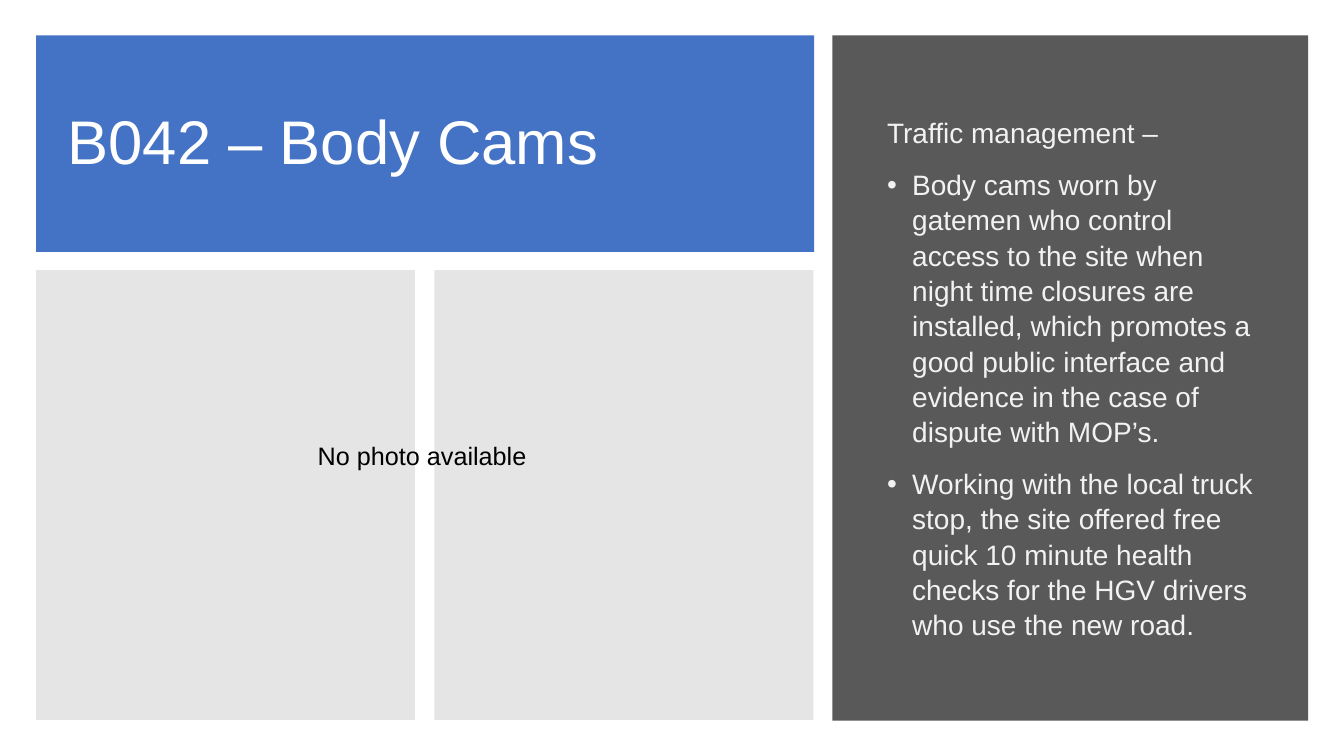
"""Build the body cams slide with a title, two photo areas and a text panel."""
from typing import NamedTuple, Optional

from lxml.etree import SubElement
from pptx import Presentation
from pptx.dml.color import RGBColor
from pptx.enum.shapes import MSO_SHAPE as Shape
from pptx.enum.text import MSO_ANCHOR as Anchor, MSO_AUTO_SIZE as AutoSize, PP_ALIGN as Align
from pptx.oxml.ns import qn
from pptx.util import Cm, Pt

BLUE = RGBColor(0x44, 0x72, 0xC4)
GREY = RGBColor(0x7F, 0x7F, 0x7F)
CHARCOAL = RGBColor(0x59, 0x59, 0x59)
OFF_WHITE = RGBColor(0xF2, 0xF2, 0xF2)
WHITE = RGBColor(0xFF, 0xFF, 0xFF)
BLACK = RGBColor(0, 0, 0)


class Box(NamedTuple):
    left: float
    top: float
    width: float
    height: float


class Panel(NamedTuple):
    box: Box
    color: RGBColor
    opacity: Optional[int] = None


class Para(NamedTuple):
    text: str
    bullet: bool = False


PHOTO_LEFT, PHOTO_WIDTH, GAP = 0.91, 9.55, 0.49
PANELS = [
    Panel(Box(PHOTO_LEFT, 0.89, 19.61, 5.46), BLUE),
    *(Panel(Box(PHOTO_LEFT + i * (PHOTO_WIDTH + GAP), 6.81, PHOTO_WIDTH, 11.33), GREY, 20)
      for i in range(2)),
    Panel(Box(20.98, 0.89, 11.99, 17.27), CHARCOAL),
]
PRACTICES = [
    Para("Traffic management –"),
    Para("Body cams worn by gatemen who control access to the site when night time "
         "closures are installed, which promotes a good public interface and evidence "
         "in the case of dispute with MOP’s.", True),
    Para("Working with the local truck stop, the site offered free quick 10 minute "
         "health checks for the HGV drivers who use the new road.", True),
]


def place(s, box: Box) -> None:
    """Move and size a shape in centimetres."""
    s.left, s.top, s.width, s.height = (Cm(v) for v in box)


def add_panel(slide, panel: Panel, layer: int) -> None:
    """Draw a filled rectangle behind the placeholders."""
    s = slide.shapes.add_shape(Shape.RECTANGLE, *(Cm(v) for v in panel.box))
    s.shadow.inherit = False
    s.line.fill.background()
    s.fill.solid()
    s.fill.fore_color.rgb = panel.color
    if panel.opacity is not None:
        color = s._element.spPr.find(".//" + qn("a:srgbClr"))
        SubElement(color, qn("a:alpha"), val=str(panel.opacity * 1000))
    slide.shapes._spTree.insert(2 + layer, s._element)


def set_bullet(p, bullet: bool) -> None:
    """Give a paragraph a hanging bullet, or none."""
    pPr = p._p.get_or_add_pPr()
    indent = Cm(0.635) if bullet else 0
    pPr.set("marL", str(indent))
    pPr.set("indent", str(-indent))
    if bullet:
        SubElement(pPr, qn("a:buFont"), typeface="Arial")
        SubElement(pPr, qn("a:buChar"), char="•")
    else:
        SubElement(pPr, qn("a:buNone"))


def write(s, paras: list[Para], *, size: float, color: RGBColor, align=Align.LEFT,
          anchor=Anchor.MIDDLE, fit=AutoSize.NONE, spacing: float = 1.0,
          after: float = 0) -> None:
    """Fill a shape with formatted paragraphs."""
    tf = s.text_frame
    tf.word_wrap = True
    tf.auto_size = fit
    tf.vertical_anchor = anchor
    for i, para in enumerate(paras):
        p = tf.add_paragraph() if i else tf.paragraphs[0]
        p.alignment = align
        p.line_spacing = spacing
        p.space_before, p.space_after = Pt(0), Pt(after)
        set_bullet(p, para.bullet)
        r = p.add_run()
        r.text = para.text
        r.font.name, r.font.size = "Arial", Pt(size)
        r.font.color.rgb = color


def main() -> None:
    """Assemble and save the slide."""
    prs = Presentation()
    prs.slide_width, prs.slide_height = Cm(33.87), Cm(19.05)
    slide = prs.slides.add_slide(prs.slide_layouts[1])
    for layer, panel in enumerate(PANELS):
        add_panel(slide, panel, layer)

    title, body = slide.shapes.title, slide.placeholders[1]
    place(title, Box(1.45, 1.37, 18.31, 4.52))
    write(title, [Para("B042 – Body Cams")], size=44, color=WHITE, spacing=0.9)
    place(body, Box(22.1, 2.11, 9.75, 14.81))
    write(body, PRACTICES, size=20, color=OFF_WHITE, spacing=1.05, after=12)

    note = slide.shapes.add_textbox(Cm(6.05), Cm(10.97), Cm(9.35), Cm(1.02))
    write(note, [Para("No photo available ")], size=18, color=BLACK, align=Align.CENTER,
          anchor=Anchor.TOP, fit=AutoSize.SHAPE_TO_FIT_TEXT)
    prs.save("out.pptx")


if __name__ == "__main__":
    main()
